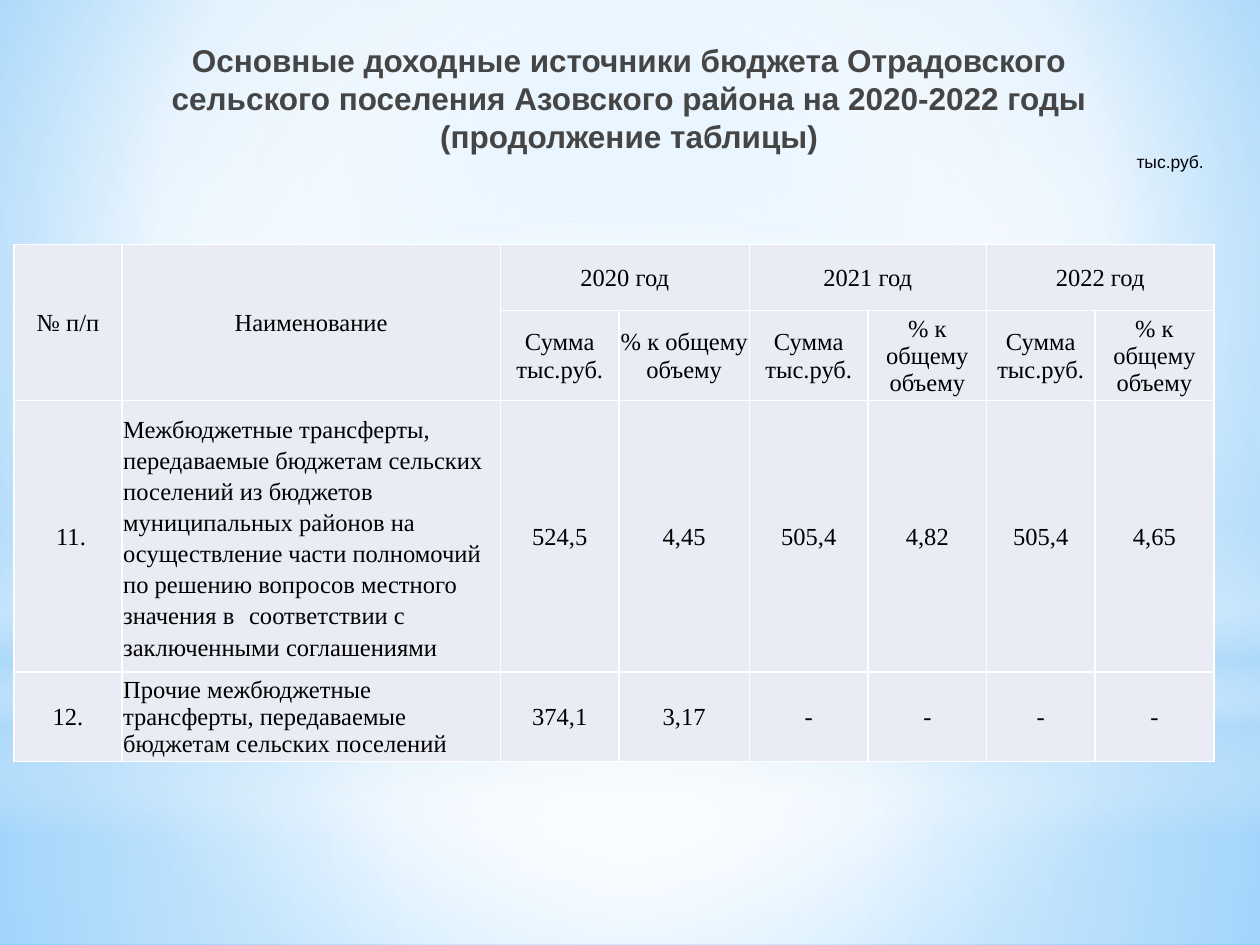
import lxml.etree
import pptx
import pptx.dml.color
import pptx.enum.shapes
import pptx.enum.text
import pptx.oxml.ns
import pptx.util

Pt = pptx.util.Pt
RGBColor = pptx.dml.color.RGBColor
ALIGN = pptx.enum.text.PP_ALIGN
ANCHOR = pptx.enum.text.MSO_ANCHOR
SHAPE = pptx.enum.shapes.MSO_SHAPE
qn = pptx.oxml.ns.qn

WHITE = RGBColor(0xFF, 0xFF, 0xFF)
BLACK = RGBColor(0, 0, 0)
TITLE_GRAY = RGBColor(0x45, 0x45, 0x45)
CELL_FILL = RGBColor(0xE9, 0xEB, 0xF5)
PALE_BLUE = RGBColor(0xB4, 0xDC, 0xFA)
SKY = RGBColor(0x9E, 0xD5, 0xFF)
DEEP_SKY = RGBColor(0x5B, 0xB9, 0xFF)

CENTER_FOCUS = (50, 50, 50, 50)
COLUMN_WIDTHS = (61.7, 216.2, 68, 74.3, 68, 67.6, 62, 68)
ROW_HEIGHTS = (37.8, 51.4, 154.9, 50.9)
YEARS = ("2020 год", "2021 год", "2022 год")
MEASURES = ("Сумма тыс.руб.", "% к общему объему")
INCOME_ROWS = (
    (" 11.", "Межбюджетные трансферты, передаваемые бюджетам сельских поселений "
     "из бюджетов муниципальных районов на осуществление части полномочий "
     "по решению вопросов местного значения в \tсоответствии с заключенными соглашениями",
     "524,5", "4,45", "505,4", "4,82", "505,4", "4,65"),
    ("12.", "Прочие межбюджетные трансферты, передаваемые бюджетам сельских поселений",
     "374,1", "3,17", "-", "-", "-", "-"),
)


def set_gradient(fill, parent, stops, focus=None):
    fill.solid()
    solid = parent.find(qn("a:solidFill"))
    gradient = lxml.etree.Element(qn("a:gradFill"), rotWithShape="1")
    stop_list = lxml.etree.SubElement(gradient, qn("a:gsLst"))
    for position, color, opacity in stops:
        stop = lxml.etree.SubElement(stop_list, qn("a:gs"), pos=str(position * 1000))
        value = lxml.etree.SubElement(stop, qn("a:srgbClr"), val=str(color))
        if opacity < 100:
            lxml.etree.SubElement(value, qn("a:alpha"), val=str(opacity * 1000))
    if focus:
        circle = lxml.etree.SubElement(gradient, qn("a:path"), {"path": "circle"})
        sides = {side: str(share * 1000) for side, share in zip("ltrb", focus)}
        lxml.etree.SubElement(circle, qn("a:fillToRect"), sides)
    else:
        lxml.etree.SubElement(gradient, qn("a:lin"), ang="5400000", scaled="0")
    parent.replace(solid, gradient)


def add_glow(slide, kind, top, height, stops, focus=None):
    shape = slide.shapes.add_shape(kind, 0, Pt(top), Pt(720), Pt(height))
    shape.shadow.inherit = False
    shape.line.fill.background()
    set_gradient(shape.fill, shape.element.spPr, stops, focus)


def add_background(slide):
    fill = slide.background.fill
    fill.solid()
    properties = slide.element.find(".//" + qn("p:bgPr"))
    set_gradient(fill, properties,
                 ((0, SKY, 100), (60, WHITE, 100), (100, DEEP_SKY, 100)), (20, 10, 20, 60))
    add_glow(slide, SHAPE.RECTANGLE, 402, 138,
             ((0, WHITE, 91), (37, WHITE, 76), (100, PALE_BLUE, 79)), CENTER_FOCUS)
    add_glow(slide, SHAPE.RECTANGLE, 0, 402,
             ((0, WHITE, 89), (48, WHITE, 62), (100, PALE_BLUE, 79)), CENTER_FOCUS)
    add_glow(slide, SHAPE.RECTANGLE, 297, 180,
             ((0, WHITE, 0), (29, WHITE, 30), (45, PALE_BLUE, 40),
              (55, WHITE, 26), (65, PALE_BLUE, 60), (100, WHITE, 0)))
    add_glow(slide, SHAPE.OVAL, 126, 402,
             ((0, WHITE, 100), (56, WHITE, 0)), CENTER_FOCUS)


def write_text(frame, text, font="Times New Roman", size=14, color=BLACK,
               bold=False, align=ALIGN.CENTER, line_spacing=None):
    frame.word_wrap = True
    paragraph = frame.paragraphs[0]
    paragraph.alignment = align
    paragraph.line_spacing = line_spacing
    run = paragraph.add_run()
    run.text = text
    run.font.name = font
    run.font.size = Pt(size)
    run.font.bold = bold
    run.font.color.rgb = color


def add_label(slide, left, top, width, height, text, anchor=ANCHOR.TOP, **text_format):
    box = slide.shapes.add_textbox(Pt(left), Pt(top), Pt(width), Pt(height))
    box.text_frame.vertical_anchor = anchor
    write_text(box.text_frame, text, font="Arial", **text_format)


def style_cell(cell):
    cell.vertical_anchor = ANCHOR.MIDDLE
    cell.margin_left = cell.margin_right = cell.margin_top = Pt(0.7)
    cell.margin_bottom = 0
    cell.fill.solid()
    cell.fill.fore_color.rgb = CELL_FILL
    properties = cell._tc.get_or_add_tcPr()
    for index, side in enumerate(("a:lnL", "a:lnR", "a:lnT", "a:lnB")):
        line = lxml.etree.Element(qn(side), w=str(Pt(1)))
        solid = lxml.etree.SubElement(line, qn("a:solidFill"))
        lxml.etree.SubElement(solid, qn("a:srgbClr"), val=str(WHITE))
        properties.insert(index, line)


def add_income_table(slide):
    frame = slide.shapes.add_table(len(ROW_HEIGHTS), len(COLUMN_WIDTHS), Pt(8), Pt(139.7),
                                   Pt(sum(COLUMN_WIDTHS)), Pt(sum(ROW_HEIGHTS)))
    table = frame.table
    table.first_row = table.horz_banding = False
    for column, width in zip(table.columns, COLUMN_WIDTHS):
        column.width = Pt(width)
    for row, height in zip(table.rows, ROW_HEIGHTS):
        row.height = Pt(height)
    for cell in table.iter_cells():
        style_cell(cell)

    for column, heading in enumerate(("№ п/п", "Наименование")):
        table.cell(0, column).merge(table.cell(1, column))
        write_text(table.cell(0, column).text_frame, heading)
    for index, year in enumerate(YEARS):
        first = 2 + 2 * index
        table.cell(0, first).merge(table.cell(0, first + 1))
        write_text(table.cell(0, first).text_frame, year)
        for offset, measure in enumerate(MEASURES):
            write_text(table.cell(1, first + offset).text_frame, measure)
    for row, (values, spacing) in enumerate(zip(INCOME_ROWS, (1.15, None)), start=2):
        for column, value in enumerate(values):
            is_name = column == 1
            write_text(table.cell(row, column).text_frame, value,
                       align=ALIGN.LEFT if is_name else ALIGN.CENTER,
                       line_spacing=spacing if is_name else None)


def main():
    presentation = pptx.Presentation()
    presentation.slide_width = Pt(720)
    presentation.slide_height = Pt(540)
    slide = presentation.slides.add_slide(presentation.slide_layouts[6])
    add_background(slide)
    add_label(slide, 87, 20, 545, 90,
              "Основные доходные источники бюджета Отрадовского сельского поселения "
              "Азовского района на 2020-2022 годы (продолжение таблицы)",
              size=18, color=TITLE_GRAY, bold=True)
    add_label(slide, 570, 83, 125, 19, "тыс.руб.", anchor=ANCHOR.MIDDLE,
              size=10, align=ALIGN.RIGHT)
    add_income_table(slide)
    presentation.save("out.pptx")


if __name__ == "__main__":
    main()
